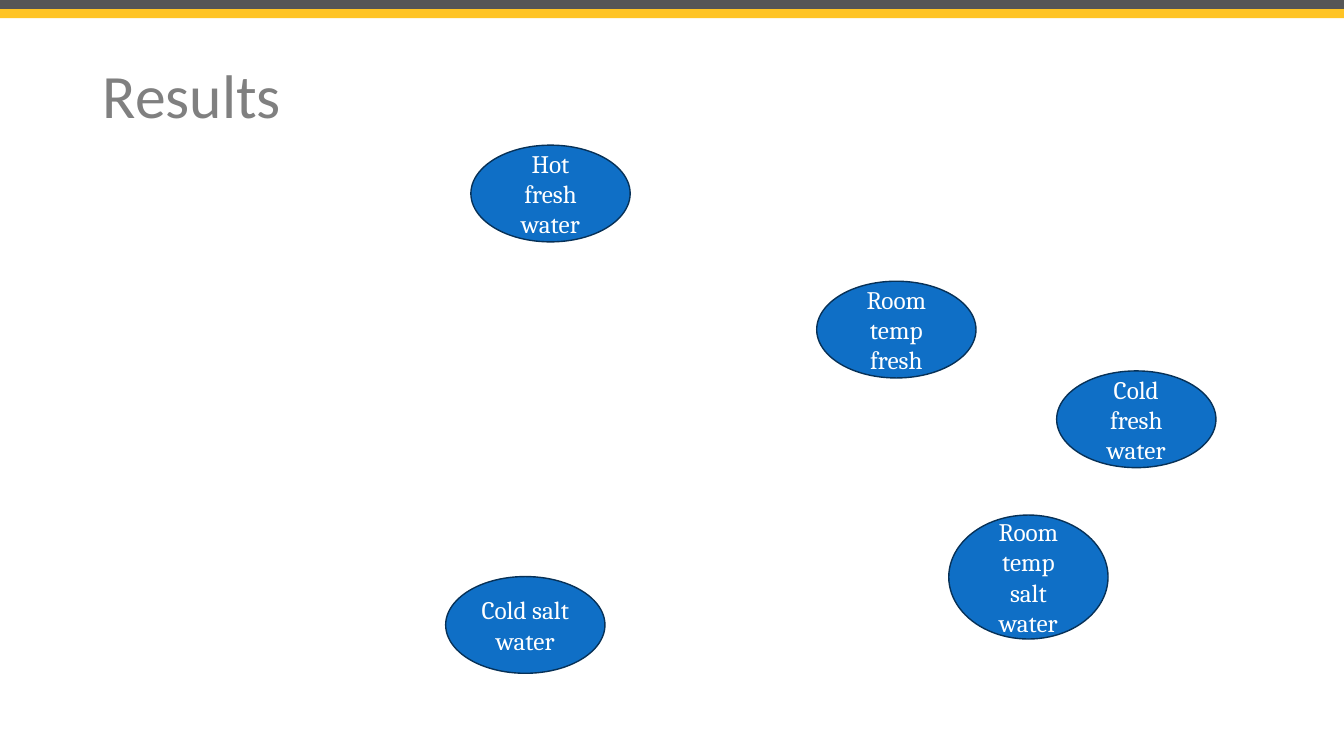
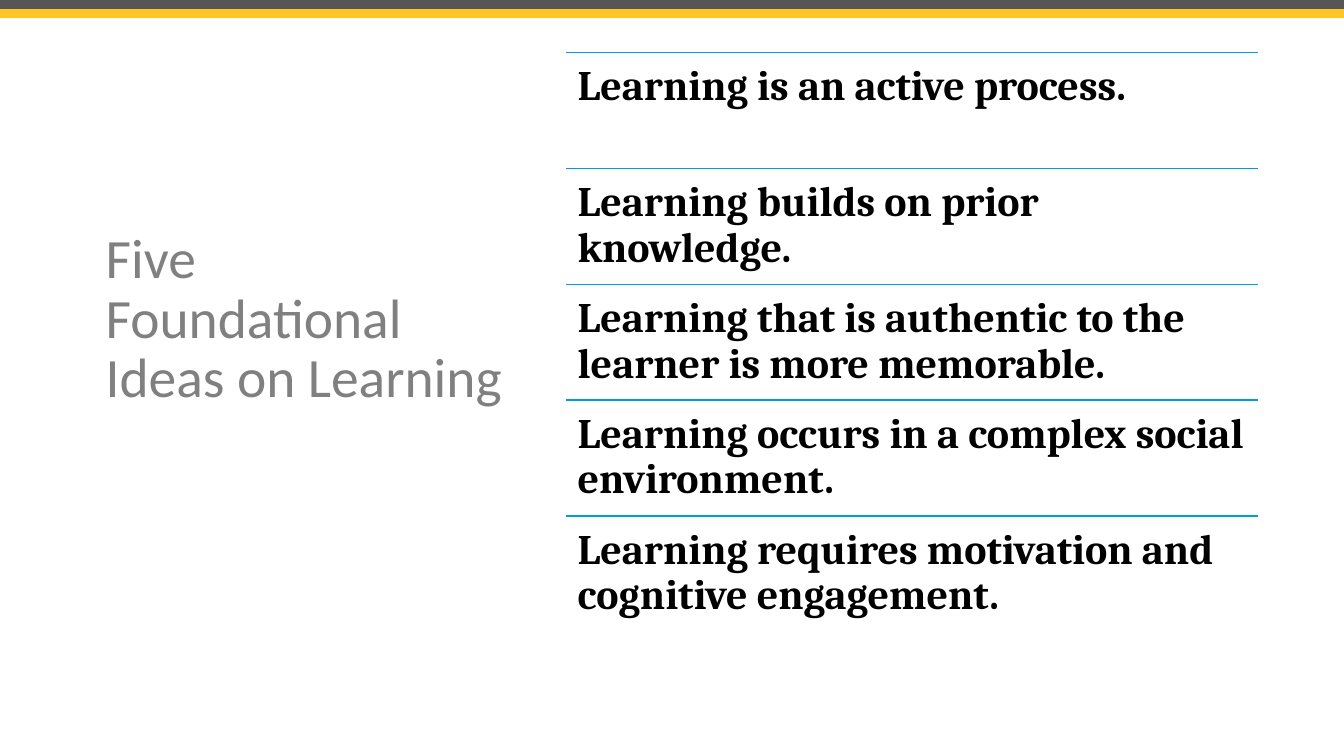
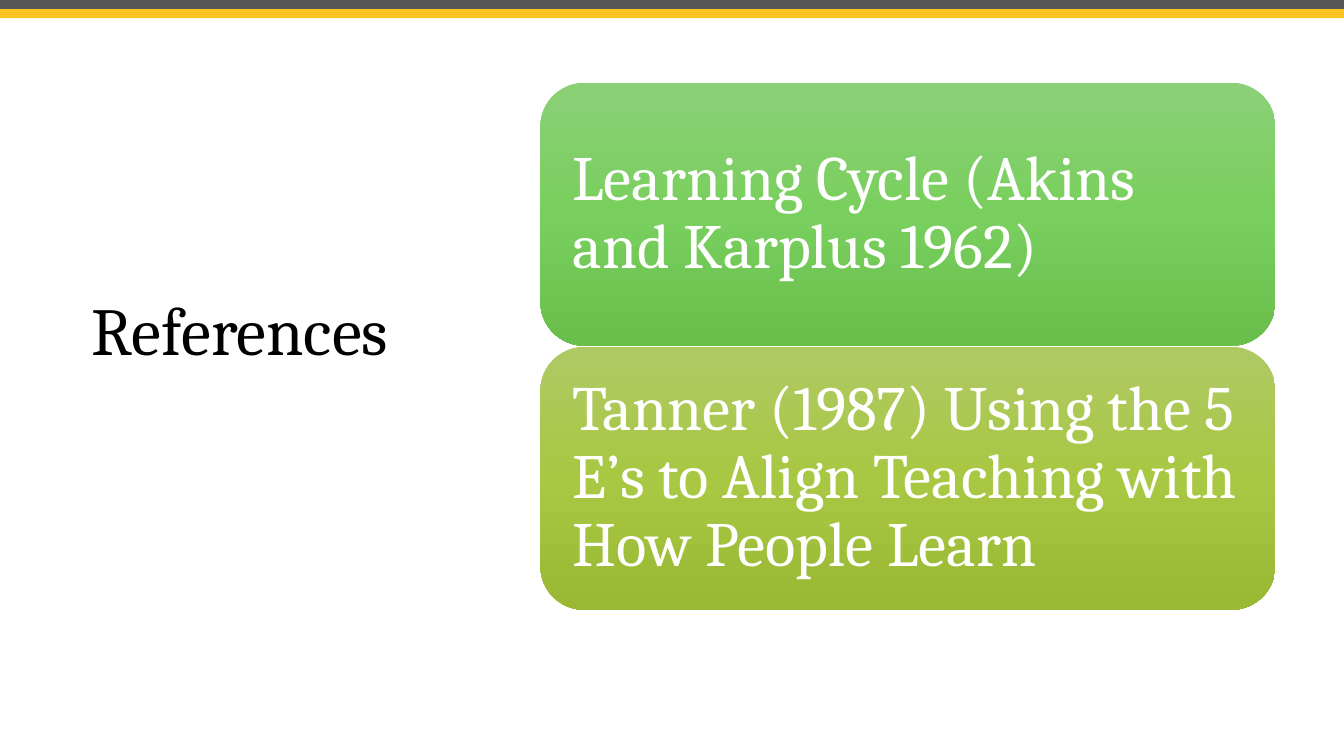
from copy import deepcopy

from lxml.etree import SubElement
from pptx import Presentation
from pptx.dml.color import RGBColor
from pptx.enum.shapes import MSO_CONNECTOR, MSO_SHAPE
from pptx.enum.text import MSO_ANCHOR, PP_ALIGN
from pptx.oxml.ns import qn
from pptx.util import Inches, Pt

WIDTH, HEIGHT = 13.33, 7.5
BAND_HEIGHT = 0.09
HEADING_FONT, BODY_FONT = "Calibri", "Cambria"
COLORS = {
    "band_dark": "565656",
    "band_gold": "FFC425",
    "title": "808080",
    "ellipse": "0F6FC6",
    "outline": "073157",
    "rule": "009DD9",
    "text": "000000",
    "light": "FFFFFF",
}

ELLIPSE_WIDTH = 1.58
RESULTS = [
    ("Hot fresh water", 4.67, 1.44, 0.96),
    ("Cold salt water", 4.42, 5.72, 0.96),
    ("Room temp fresh", 8.1, 2.79, 0.96),
    ("Room temp salt water", 9.41, 5.11, 1.23),
    ("Cold fresh water", 10.48, 3.68, 0.96),
]

IDEAS_LEFT, IDEAS_TOP, IDEAS_WIDTH, IDEA_HEIGHT = 5.61, 0.52, 6.87, 1.15
IDEAS = [
    "Learning is an active process.",
    "Learning builds on prior knowledge.",
    "Learning that is authentic to the learner is more memorable.",
    "Learning occurs in a complex social environment.",
    "Learning requires motivation and cognitive engagement.",
]

CARD_LEFT, CARD_TOP, CARD_WIDTH, CARD_HEIGHT, CARD_PITCH = 5.36, 0.82, 7.29, 2.61, 2.62
REFERENCES = [
    ("Learning Cycle (Akins and Karplus 1962)", ("8BD077", "79CF5D", "69BE4C")),
    ("Tanner (1987) Using the 5 E’s to Align Teaching with How People Learn",
     ("AFC964", "A8C843", "99B935")),
]


def rgb(name):
    return RGBColor.from_string(COLORS[name])


def write(shape, text, size, color, font=BODY_FONT, bold=False, align=PP_ALIGN.LEFT,
          anchor=MSO_ANCHOR.MIDDLE, spacing=None, inset=None):
    frame = shape.text_frame
    frame.word_wrap = True
    frame.vertical_anchor = anchor
    if inset is not None:
        frame.margin_left = frame.margin_right = Inches(inset)
        frame.margin_top = frame.margin_bottom = Inches(inset)
    paragraph = frame.paragraphs[0]
    paragraph.text = text
    paragraph.alignment = align
    paragraph.line_spacing = spacing
    paragraph.font.name = font
    paragraph.font.size = Pt(size)
    paragraph.font.bold = bold
    paragraph.font.color.rgb = rgb(color)


def add_text(slide, box, text, size, color, **style):
    write(slide.shapes.add_textbox(*map(Inches, box)), text, size, color, **style)


def add_title(slide, box, text, size):
    add_text(slide, box, text, size, "title", font=HEADING_FONT, spacing=0.9)


def add_shape(slide, kind, box, fill=None, outline=None):
    shape = slide.shapes.add_shape(kind, *map(Inches, box))
    shape.shadow.inherit = False
    if fill:
        shape.fill.solid()
        shape.fill.fore_color.rgb = rgb(fill)
    if outline:
        shape.line.color.rgb = rgb(outline)
        shape.line.width = Pt(1)
    else:
        shape.line.fill.background()
    return shape


def add_rule(slide, left, top, width):
    rule = slide.shapes.add_connector(
        MSO_CONNECTOR.STRAIGHT, Inches(left), Inches(top), Inches(left + width), Inches(top))
    rule.line.color.rgb = rgb("rule")
    rule.line.width = Pt(1)
    SubElement(rule._element.spPr, qn("a:effectLst"))


def fill_gradient(shape, colors):
    shape.fill.gradient()
    shape.fill.gradient_angle = 270
    stop_list = shape._element.spPr.find(qn("a:gradFill")).find(qn("a:gsLst"))
    stop_list.append(deepcopy(stop_list[-1]))
    for index, (stop, color) in enumerate(zip(shape.fill.gradient_stops, colors)):
        stop.position = index / (len(colors) - 1)
        stop.color.rgb = RGBColor.from_string(color)


def new_slide(presentation):
    slide = presentation.slides.add_slide(presentation.slide_layouts[6])
    for row, color in enumerate(("band_dark", "band_gold")):
        box = (0, row * BAND_HEIGHT, WIDTH, BAND_HEIGHT)
        add_shape(slide, MSO_SHAPE.RECTANGLE, box, color)
    return slide


def build_results(presentation):
    slide = new_slide(presentation)
    add_title(slide, (0.92, 0.4, 11.5, 1.16), "Results", 44)
    for label, left, top, height in RESULTS:
        box = (left, top, ELLIPSE_WIDTH, height)
        ellipse = add_shape(slide, MSO_SHAPE.OVAL, box, "ellipse", "outline")
        write(ellipse, label, 18, "light", align=PP_ALIGN.CENTER)


def build_ideas(presentation):
    slide = new_slide(presentation)
    add_title(slide, (0.95, 1.83, 4.15, 2.69), "Five\vFoundational Ideas on Learning", 39.6)
    for row, idea in enumerate(IDEAS):
        top = IDEAS_TOP + row * IDEA_HEIGHT
        add_rule(slide, IDEAS_LEFT, top, IDEAS_WIDTH)
        add_text(slide, (IDEAS_LEFT, top, IDEAS_WIDTH, IDEA_HEIGHT), idea, 30, "text",
                 bold=True, anchor=MSO_ANCHOR.TOP, spacing=0.9, inset=0.12)


def build_references(presentation):
    slide = new_slide(presentation)
    for row, (reference, colors) in enumerate(REFERENCES):
        box = (CARD_LEFT, CARD_TOP + row * CARD_PITCH, CARD_WIDTH, CARD_HEIGHT)
        card = add_shape(slide, MSO_SHAPE.ROUNDED_RECTANGLE, box)
        fill_gradient(card, colors)
        write(card, reference, 45, "light", spacing=0.9, inset=0.19)
    add_text(slide, (0.81, 2.81, 3.68, 0.91), "References", 48, "text", anchor=MSO_ANCHOR.TOP)


def main():
    presentation = Presentation()
    presentation.slide_width = Inches(WIDTH)
    presentation.slide_height = Inches(HEIGHT)
    build_results(presentation)
    build_ideas(presentation)
    build_references(presentation)
    presentation.save("out.pptx")


if __name__ == "__main__":
    main()
